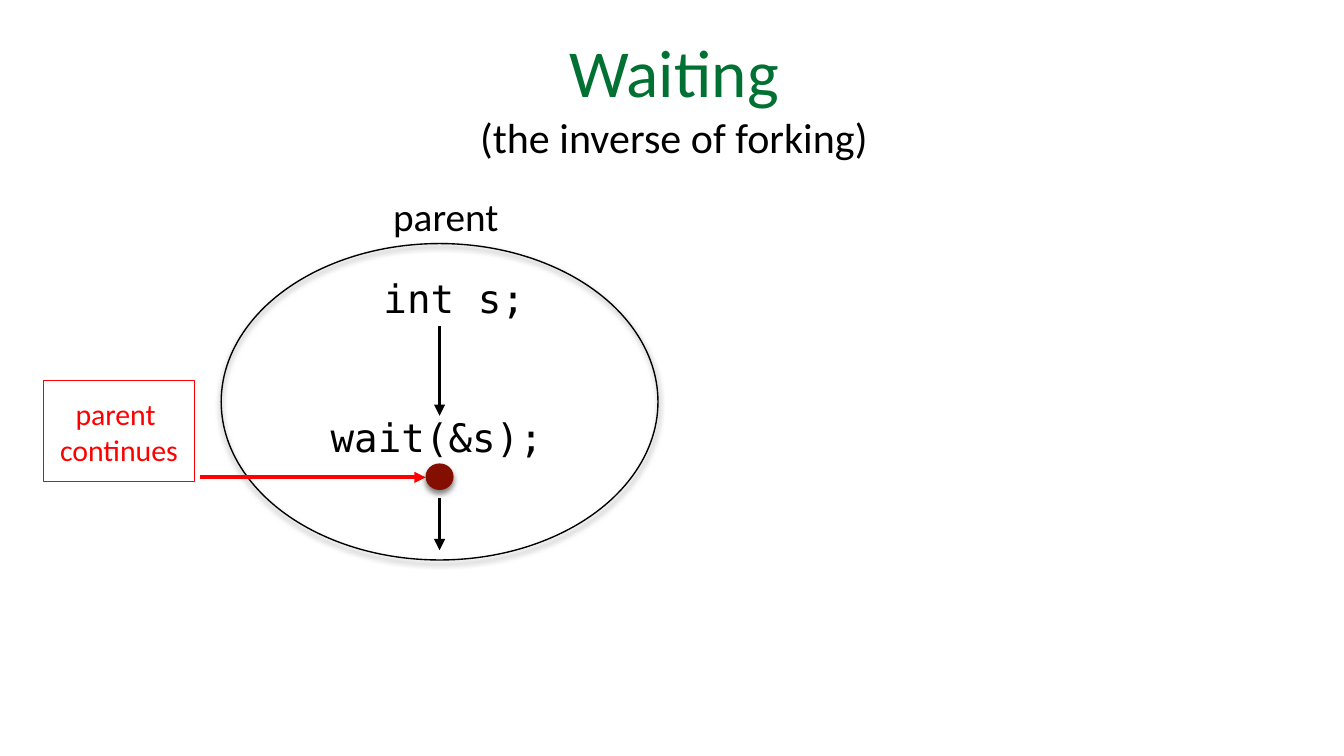
from lxml import etree
from pptx import Presentation
from pptx.dml.color import RGBColor
from pptx.enum.shapes import MSO_CONNECTOR, MSO_SHAPE
from pptx.enum.text import MSO_ANCHOR, MSO_AUTO_SIZE, PP_ALIGN
from pptx.oxml import parse_xml
from pptx.oxml.ns import nsdecls, qn
from pptx.util import Pt

PX = 9525  # EMU per px, 96 px to the inch
STRAIGHT = MSO_CONNECTOR.STRAIGHT
OVAL, RECT = MSO_SHAPE.OVAL, MSO_SHAPE.RECTANGLE
MIDDLE, CENTER, NO_FIT = MSO_ANCHOR.MIDDLE, PP_ALIGN.CENTER, MSO_AUTO_SIZE.NONE
SANS, MONO = "Calibri", "DejaVu Sans Mono"
COLORS = {"green": "007033", "black": "000000", "red": "FF0000",
          "maroon": "840F00", "white": "FFFFFF"}
COLORS = {name: RGBColor.from_string(c) for name, c in COLORS.items()}
SHADOW = (f'<a:outerShdw {nsdecls("a")} blurRad="{Pt(3)}" dist="{Pt(2)}" dir="5400000" '
          'rotWithShape="0"><a:srgbClr val="000000"><a:alpha val="50000"/></a:srgbClr>'
          '</a:outerShdw>')


def set_text(sp, lines, wrap=True):
    """Fill a shape with centred paragraphs of (text, size, font, colour)."""
    tf = sp.text_frame
    tf.auto_size = NO_FIT
    tf.word_wrap = wrap
    tf.vertical_anchor = MIDDLE
    tf.margin_left = tf.margin_right = tf.margin_top = tf.margin_bottom = 4 * PX
    for i, (text, size, font, color) in enumerate(lines):
        p = tf.add_paragraph() if i else tf.paragraphs[0]
        p.text = text
        p.alignment = CENTER
        p.font.size = Pt(size)
        p.font.name = font
        p.font.color.rgb = COLORS[color]


def add_shape(kind, box, fill=None, line=None, shadow=False):
    sp = s.shapes.add_shape(kind, *(v * PX for v in box))
    if fill:
        sp.fill.solid()
        sp.fill.fore_color.rgb = COLORS[fill]
    else:
        sp.fill.background()
    if line:
        sp.line.color.rgb = COLORS[line]
        sp.line.width = Pt(0.75)
    else:
        sp.line.fill.background()
    sp.shadow.inherit = False
    if shadow:
        sp._element.spPr.find(qn("a:effectLst")).append(parse_xml(SHADOW))
    return sp


prs = Presentation()
prs.slide_width, prs.slide_height = 960 * PX, 540 * PX
s = prs.slides.add_slide(prs.slide_layouts[5])

title = s.shapes.title
title.left, title.top, title.width, title.height = (v * PX for v in (197, 2, 569, 133))
set_text(title, [("Waiting", 36, SANS, "green"),
                 ("(the inverse of forking)", 22.5, SANS, "black")])

# Parent process
add_shape(OVAL, (158, 174, 312, 226), line="black", shadow=True)
for text, font, box in [
    ("wait(&s);", MONO, (232, 291, 160, 42)),
    ("int s;", MONO, (270, 192, 109, 42)),
    ("parent", SANS, (271, 134, 95, 40)),
]:
    label = s.shapes.add_textbox(*(v * PX for v in box))
    set_text(label, [(text, 21, font, "black")], wrap=False)

# Flow of control
for x1, y1, x2, y2, color in [
    (314, 233, 314, 297, "black"),
    (143, 341, 304, 341, "red"),
    (314, 356, 314, 393, "black"),
]:
    arrow = s.shapes.add_connector(STRAIGHT, x1 * PX, y1 * PX, x2 * PX, y2 * PX)
    arrow.line.color.rgb = COLORS[color]
    arrow.line.width = Pt(2)
    spPr = arrow._element.spPr
    etree.SubElement(spPr.get_or_add_ln(), qn("a:tailEnd"), type="triangle")
    etree.SubElement(spPr, qn("a:effectLst"))

add_shape(OVAL, (304, 331, 20, 19), fill="maroon", shadow=True)
note = add_shape(RECT, (31, 272, 108, 72), fill="white", line="red")
set_text(note, [("parent \vcontinues", 16, SANS, "red")])

prs.save("out.pptx")
